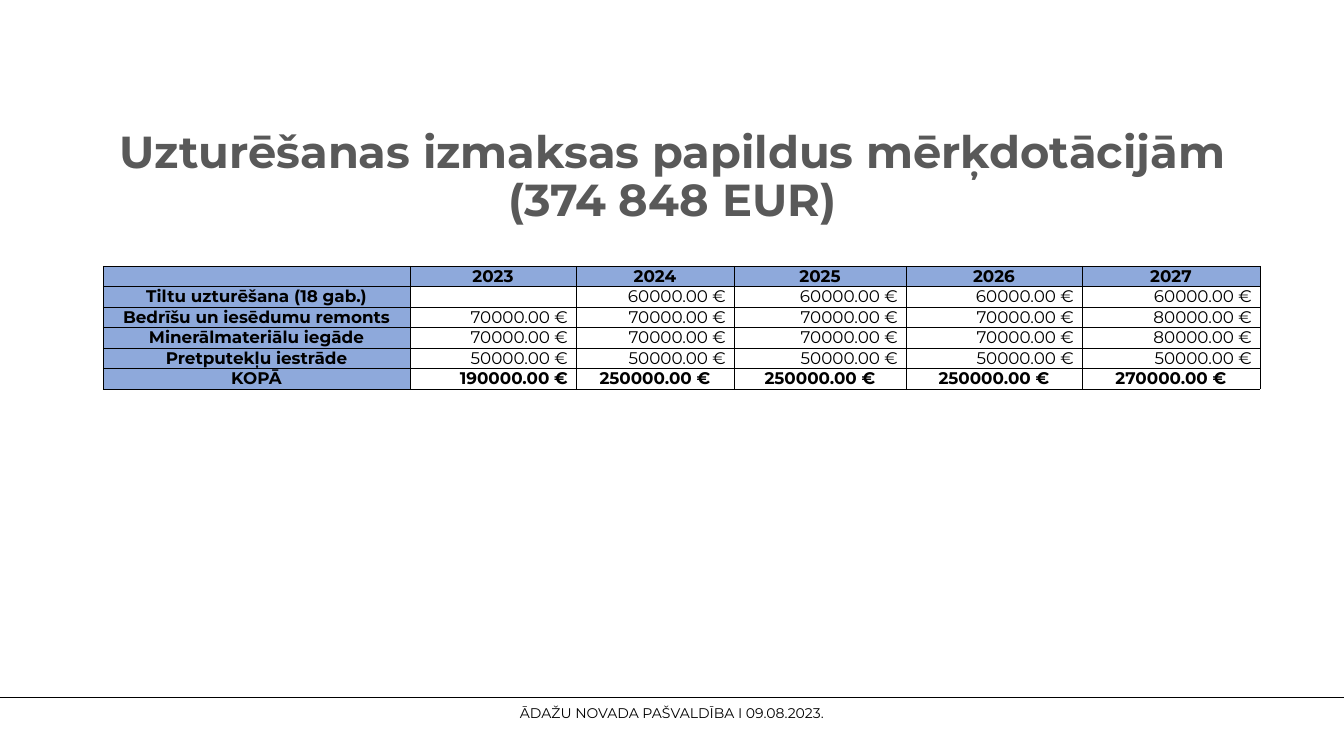
from lxml import etree
from pptx import Presentation
from pptx import util as u
from pptx.dml.color import RGBColor
from pptx.enum import shapes, text
from pptx.oxml import ns

PX_PER_INCH = 67.2
YEARS = ["2023", "2024", "2025", "2026", "2027"]
COSTS = {
    "Tiltu uzturēšana (18 gab.)": [None, 60000, 60000, 60000, 60000],
    "Bedrīšu un iesēdumu remonts": [70000, 70000, 70000, 70000, 80000],
    "Minerālmateriālu iegāde": [70000, 70000, 70000, 70000, 80000],
    "Pretputekļu iestrāde": [50000] * 5,
}
COLUMN_WIDTHS = [307, 166, 158, 172, 176, 178]
ROW_HEIGHT = 20


def px(length):
    return u.Emu(round(length * u.Inches(1) / PX_PER_INCH))


def color(value):
    return RGBColor.from_string(value)


def euros(amount):
    return "" if amount is None else f"{amount:.2f} €"


class CostSlide:
    FONT = "Montserrat"
    BLACK = "000000"
    GRAY = "595959"
    BLUE = "8EA9DB"
    CENTER = text.PP_ALIGN.CENTER
    RIGHT = text.PP_ALIGN.RIGHT

    def __init__(self, deck):
        self.page = deck.slides.add_slide(deck.slide_layouts[5])

    def set_text(self, para, words, size, ink, bold=False, align=CENTER):
        para.text = words
        para.alignment = align
        font = para.font
        font.name, font.size, font.bold = self.FONT, u.Pt(size), bold
        font.color.rgb = color(ink)

    def title(self, words, *bounds):
        box = self.page.shapes.title
        box.left, box.top, box.width, box.height = map(px, bounds)
        box.text_frame.vertical_anchor = text.MSO_ANCHOR.MIDDLE
        para = box.text_frame.paragraphs[0]
        self.set_text(para, words, 48, self.GRAY, bold=True)
        para.line_spacing = 0.9

    def borders(self, cell):
        properties = cell._tc.get_or_add_tcPr()
        for position, side in enumerate(("lnL", "lnR", "lnT", "lnB")):
            line = etree.Element(ns.qn(f"a:{side}"), w=str(u.Pt(0.5)))
            fill = etree.SubElement(line, ns.qn("a:solidFill"))
            etree.SubElement(fill, ns.qn("a:srgbClr"), val=self.BLACK)
            properties.insert(position, line)

    def cell(self, cell, words, bold, align, shaded):
        cell.margin_left = cell.margin_top = cell.margin_bottom = 0
        cell.margin_right = px(8 if align == self.RIGHT else 0)
        cell.vertical_anchor = text.MSO_ANCHOR.BOTTOM
        if shaded:
            cell.fill.solid()
            cell.fill.fore_color.rgb = color(self.BLUE)
        else:
            cell.fill.background()
        self.set_text(cell.text_frame.paragraphs[0], words, 18, self.BLACK, bold, align)
        self.borders(cell)

    def table(self, rows, left, top):
        frame = self.page.shapes.add_table(
            len(rows), len(COLUMN_WIDTHS), px(left), px(top),
            px(sum(COLUMN_WIDTHS)), px(ROW_HEIGHT * len(rows)))
        grid = frame.table
        for column, width in zip(grid.columns, COLUMN_WIDTHS):
            column.width = px(width)
        last = len(rows) - 1
        for r, row in enumerate(rows):
            for c, words in enumerate(row):
                shaded = r == 0 or c == 0
                total = r == last
                centered = shaded or (total and c > 1)
                align = self.CENTER if centered else self.RIGHT
                self.cell(grid.cell(r, c), words, shaded or total, align, shaded)

    def rule(self, left, right, y):
        line = self.page.shapes.add_connector(
            shapes.MSO_CONNECTOR.STRAIGHT, px(left), px(y), px(right), px(y))
        line.line.color.rgb = color(self.BLACK)
        line.line.width = u.Pt(0.75)
        etree.SubElement(line._element.spPr, ns.qn("a:effectLst"))

    def footer(self, words, *bounds):
        box = self.page.shapes.add_textbox(*map(px, bounds))
        frame = box.text_frame
        frame.word_wrap = True
        frame.margin_left = frame.margin_right = 0
        frame.margin_top = frame.margin_bottom = 0
        para = frame.paragraphs[0]
        self.set_text(para, words, 15, self.BLACK)
        para.line_spacing = u.Pt(18)


def main():
    deck = Presentation()
    deck.slide_width, deck.slide_height = px(1344), px(756)
    slide = CostSlide(deck)
    slide.title("Uzturēšanas izmaksas papildus mērķdotācijām (374 848 EUR)",
                93, 105, 1159, 146)
    totals = [sum(filter(None, year)) for year in zip(*COSTS.values())]
    rows = [["", *YEARS]]
    for name, amounts in {**COSTS, "KOPĀ": totals}.items():
        rows.append([name, *map(euros, amounts)])
    slide.table(rows, 103, 266)
    slide.rule(0, 1344, 697)
    slide.footer("ĀDAŽU NOVADA PAŠVALDĪBA I 09.08.2023.", 7, 704, 1330, 17)
    deck.save("out.pptx")


if __name__ == "__main__":
    main()
